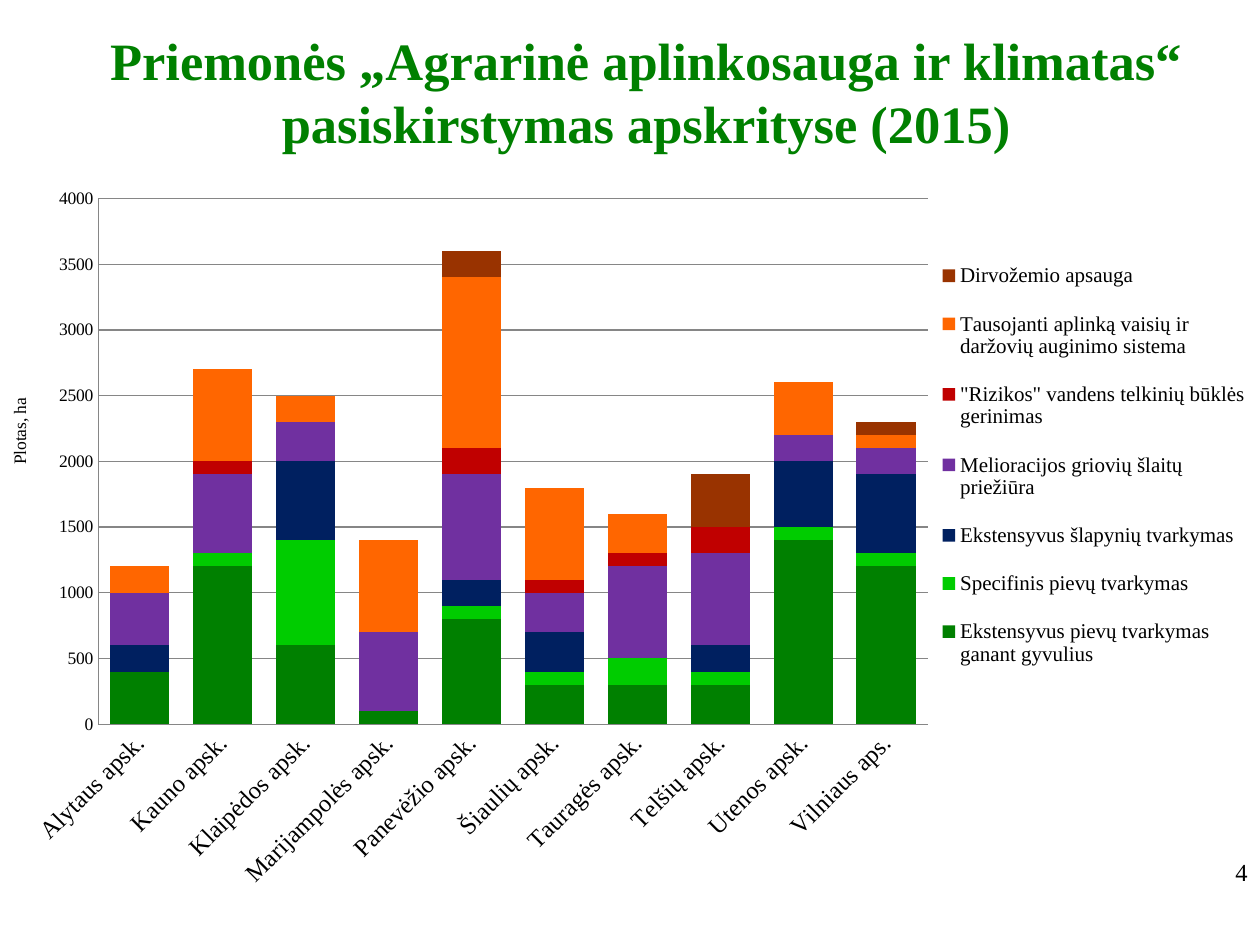
from lxml import etree
from pptx import Presentation
from pptx.chart.data import CategoryChartData
from pptx.dml.color import RGBColor
from pptx.enum import chart as charts, text
from pptx.oxml import parse_xml
from pptx.oxml.ns import nsdecls, qn
from pptx.util import Inches, Pt

FONT = "Times New Roman"
COLORS = {
    "title": "008000", "text": "000000", "grid": "868686",
    "grazing": "008000", "meadows": "00CC00", "wetlands": "002060",
    "ditches": "7030A0", "water": "C00000", "orchards": "FF6600",
    "soil": "993300",
}
COUNTIES = [
    "Alytaus apsk.", "Kauno apsk.", "Klaipėdos apsk.", "Marijampolės apsk.",
    "Panevėžio apsk.", "Šiaulių apsk.", "Tauragės apsk.", "Telšių apsk.",
    "Utenos apsk.", "Vilniaus aps.",
]
MEASURES = [
    ("Ekstensyvus pievų tvarkymas ganant gyvulius", "grazing",
     [400, 1200, 600, 100, 800, 300, 300, 300, 1400, 1200]),
    ("Specifinis pievų tvarkymas", "meadows",
     [0, 100, 800, 0, 100, 100, 200, 100, 100, 100]),
    ("Ekstensyvus šlapynių tvarkymas", "wetlands",
     [200, 0, 600, 0, 200, 300, 0, 200, 500, 600]),
    ("Melioracijos griovių šlaitų priežiūra", "ditches",
     [400, 600, 300, 600, 800, 300, 700, 700, 200, 200]),
    ('"Rizikos" vandens telkinių būklės gerinimas', "water",
     [0, 100, 0, 0, 200, 100, 100, 200, 0, 0]),
    ("Tausojanti aplinką vaisių ir daržovių auginimo sistema", "orchards",
     [200, 700, 200, 700, 1300, 700, 300, 0, 400, 100]),
    ("Dirvožemio apsauga", "soil",
     [0, 0, 0, 0, 200, 0, 0, 400, 0, 100]),
]


def rgb(name):
    return RGBColor.from_string(COLORS[name])


def format_font(font, size, color="text", bold=False):
    font.name = FONT
    font.size = Pt(size)
    font.bold = bold
    font.color.rgb = rgb(color)


def write_text(frame, content, size, color="text", bold=False,
               align=text.PP_ALIGN.LEFT, anchor=text.MSO_ANCHOR.TOP):
    frame.word_wrap = True
    frame.vertical_anchor = anchor
    paragraph = frame.paragraphs[0]
    paragraph.alignment = align
    run = paragraph.add_run()
    run.text = content
    format_font(run.font, size, color, bold)


def place(shape, left, top, width, height):
    shape.left, shape.top = Inches(left), Inches(top)
    shape.width, shape.height = Inches(width), Inches(height)


def rotate_text(body, angle):
    body.set("rot", str(angle * 60000))
    body.set("vert", "horz")


def set_layout(element, successors, inner=False, **fractions):
    """Give a chart part a manual place, as fractions of the chart."""
    for previous in element.findall(qn("c:layout")):
        element.remove(previous)
    layout = parse_xml(f"<c:layout {nsdecls('c')}><c:manualLayout/></c:layout>")
    manual = layout[0]
    if inner:
        etree.SubElement(manual, qn("c:layoutTarget")).set("val", "inner")
    for key in ("x", "y"):
        etree.SubElement(manual, qn(f"c:{key}Mode")).set("val", "edge")
    for key, value in fractions.items():
        etree.SubElement(manual, qn(f"c:{key}")).set("val", str(value))
    for child in element:
        if child.tag in [qn(name) for name in successors]:
            child.addprevious(layout)
            return
    element.append(layout)


def format_axes(chart):
    for axis, size in ((chart.category_axis, 14), (chart.value_axis, 10)):
        axis.major_tick_mark = charts.XL_TICK_MARK.NONE
        axis.minor_tick_mark = charts.XL_TICK_MARK.NONE
        axis.format.line.color.rgb = rgb("grid")
        format_font(axis.tick_labels.font, size)
    labels = chart.category_axis._element.find(qn("c:txPr"))
    rotate_text(labels.find(qn("a:bodyPr")), -45)

    values = chart.value_axis
    values.minimum_scale, values.maximum_scale, values.major_unit = 0, 4000, 500
    values.has_major_gridlines = True
    values.major_gridlines.format.line.color.rgb = rgb("grid")
    frame = values.axis_title.text_frame
    write_text(frame, "Plotas, ha", 10, align=text.PP_ALIGN.CENTER)
    rotate_text(frame._txBody.find(qn("a:bodyPr")), -90)
    set_layout(values.axis_title._element, ["c:overlay", "c:spPr"], x=0, y=0.37)


def add_area_chart(slide):
    """Stacked columns of the area under each measure, by county."""
    data = CategoryChartData()
    data.categories = COUNTIES
    for name, _, areas in MEASURES:
        data.add_series(name, areas)
    chart = slide.shapes.add_chart(
        charts.XL_CHART_TYPE.COLUMN_STACKED, Inches(0.04), Inches(0.72),
        Inches(11.37), Inches(6.53), data).chart
    chart.has_title = False
    format_font(chart.font, 10)

    plot = chart.plots[0]
    plot.gap_width, plot.overlap = 40, 100
    plot.vary_by_categories = False
    for series, (_, color, _) in zip(plot.series, MEASURES):
        series.format.fill.solid()
        series.format.fill.fore_color.rgb = rgb(color)
    format_axes(chart)

    chart.has_legend = True
    legend = chart.legend
    legend.position = charts.XL_LEGEND_POSITION.RIGHT
    legend.include_in_layout = False
    format_font(legend.font, 12)
    set_layout(legend._element, ["c:overlay", "c:spPr", "c:txPr"],
               x=0.65, y=0.18, w=0.22, h=0.55)
    set_layout(chart._chartSpace.chart.plotArea, ["c:barChart"], inner=True,
               x=0.065, y=0.131, w=0.579, h=0.639)


def main():
    presentation = Presentation()
    presentation.slide_width, presentation.slide_height = Inches(10), Inches(7.5)
    slide = presentation.slides.add_slide(presentation.slide_layouts[5])

    title = slide.shapes.title
    place(title, 0.67, 0.17, 8.92, 1.11)
    write_text(title.text_frame,
               "Priemonės „Agrarinė aplinkosauga ir klimatas“ "
               "pasiskirstymas apskrityse (2015)",
               30, color="title", bold=True, align=text.PP_ALIGN.CENTER,
               anchor=text.MSO_ANCHOR.MIDDLE)
    add_area_chart(slide)
    number = slide.shapes.add_textbox(Inches(7.92), Inches(6.75),
                                      Inches(2.08), Inches(0.5))
    write_text(number.text_frame, "4", 14, align=text.PP_ALIGN.RIGHT)

    presentation.save("out.pptx")


if __name__ == "__main__":
    main()
